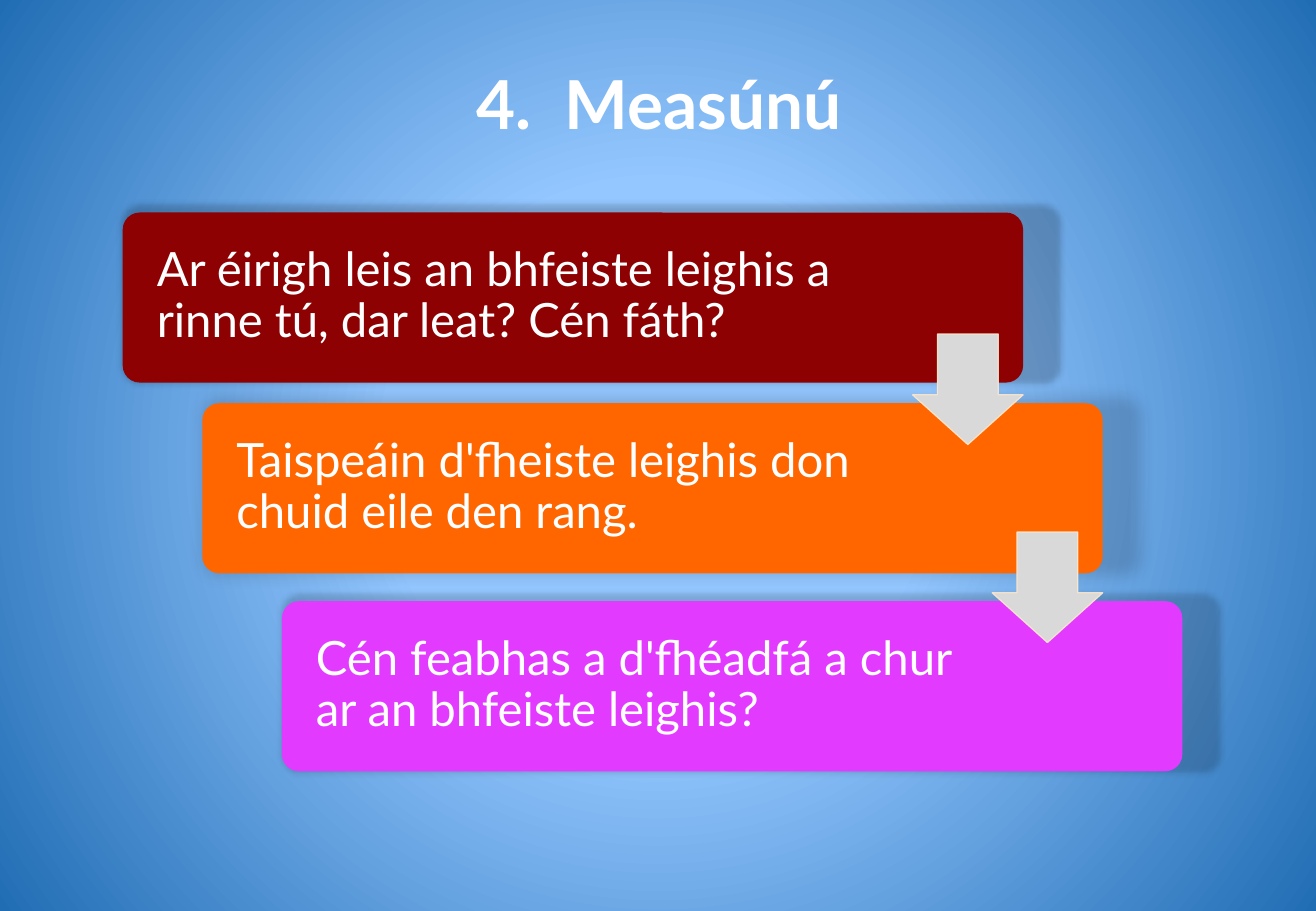
from lxml import etree
from pptx import Presentation
from pptx.dml.color import RGBColor
from pptx.enum.shapes import MSO_SHAPE
from pptx.enum.text import MSO_ANCHOR, PP_ALIGN
from pptx.oxml import parse_xml
from pptx.oxml.ns import nsdecls, qn
from pptx.util import Inches, Pt

CARD_SHAPE = MSO_SHAPE.ROUNDED_RECTANGLE
ARROW_SHAPE = MSO_SHAPE.DOWN_ARROW
MIDDLE = MSO_ANCHOR.MIDDLE
CENTER = PP_ALIGN.CENTER

FONT = "Lato"
TITLE_ONLY = 5
COLORS = {
    "glow": "94C7FF",
    "edge": "216DB4",
    "red": "8E0103",
    "orange": "FF6600",
    "pink": "E23BFF",
    "arrow": "D9D9D9",
    "arrow_line": "FDE8CD",
    "text": "FFFFFF",
    "shadow": "000000",
}

# Staircase: first left edge, step to the right, card and arrow sizes (inches)
FIRST_LEFT, STEP = 1.01, 0.655
CARD_WIDTH, CARD_HEIGHT = 7.41, 1.4
ARROW_SIZE, ARROW_RISE = 0.91, 0.57

# Top, colour, shadow opacity (%), shadow blur (pt), text width, wording
CARDS = [
    (1.75, "red", 20, 4, 5.91,
     "Ar éirigh leis an bhfeiste leighis a rinne tú, dar leat? Cén fáth?"),
    (3.32, "orange", 15, 8.8, 5.77,
     "Taispeáin d'fheiste leighis don chuid eile den rang."),
    (4.95, "pink", 16, 4, 5.77,
     "Cén feabhas a d'fhéadfá a chur ar an bhfeiste leighis?"),
]


def rgb(name):
    return RGBColor.from_string(COLORS[name])


def format_text(box, size, bold=False):
    for para in box.text_frame.paragraphs:
        for span in para.runs:
            span.font.name = FONT
            span.font.size = Pt(size)
            span.font.bold = bold
            span.font.color.rgb = rgb("text")


def paint_background(page):
    """Radial gradient, light in the centre."""
    page.background.fill.solid()
    properties = page.background._cSld.bg.bgPr
    gradient = parse_xml(
        f'<a:gradFill {nsdecls("a")} rotWithShape="1"><a:gsLst>'
        f'<a:gs pos="34000"><a:srgbClr val="{COLORS["glow"]}"/></a:gs>'
        f'<a:gs pos="100000"><a:srgbClr val="{COLORS["edge"]}"/></a:gs>'
        '</a:gsLst><a:path path="circle">'
        '<a:fillToRect l="50000" t="50000" r="50000" b="50000"/>'
        '</a:path></a:gradFill>')
    properties.replace(properties.find(qn("a:solidFill")), gradient)


def add_title(page, left, top, width, height):
    title = page.shapes.title
    title.left, title.top = Inches(left), Inches(top)
    title.width, title.height = Inches(width), Inches(height)
    title.text_frame.text = "4.  Measúnú"
    title.text_frame.vertical_anchor = MIDDLE
    title.text_frame.paragraphs[0].alignment = CENTER
    format_text(title, 40, bold=True)


def add_shadow(shape, opacity, blur):
    """Slightly enlarged shadow, shifted 4 pt upwards."""
    shape.shadow.inherit = False
    effects = shape._element.spPr.find(qn("a:effectLst"))
    effects.append(parse_xml(
        f'<a:outerShdw {nsdecls("a")} blurRad="{Pt(blur)}" dist="{Pt(4)}" '
        'dir="16200000" sx="104000" sy="104000" algn="tl" rotWithShape="0">'
        f'<a:srgbClr val="{COLORS["shadow"]}">'
        f'<a:alpha val="{opacity * 1000}"/></a:srgbClr></a:outerShdw>'))


def add_card(page, left, top, color, opacity, blur, text_width, text):
    card = page.shapes.add_shape(
        CARD_SHAPE, Inches(left), Inches(top),
        Inches(CARD_WIDTH), Inches(CARD_HEIGHT))
    card.adjustments[0] = 0.1
    card.fill.solid()
    card.fill.fore_color.rgb = rgb(color)
    card.line.fill.background()
    add_shadow(card, opacity, blur)

    # Wording, kept clear of the arrows on the right
    box = page.shapes.add_textbox(
        Inches(left + 0.04), Inches(top + 0.04),
        Inches(text_width), Inches(CARD_HEIGHT - 0.09))
    frame = box.text_frame
    frame.word_wrap = True
    frame.vertical_anchor = MIDDLE
    frame.margin_left = Inches(0.24)
    frame.margin_top = frame.margin_right = frame.margin_bottom = Inches(0.12)
    frame.text = text
    frame.paragraphs[0].line_spacing = 0.9
    format_text(box, 28)


def add_arrow(page, right, top):
    arrow = page.shapes.add_shape(
        ARROW_SHAPE, Inches(right - ARROW_SIZE), Inches(top),
        Inches(ARROW_SIZE), Inches(ARROW_SIZE))
    arrow.adjustments[0] = 0.55
    arrow.adjustments[1] = 0.45
    arrow.shadow.inherit = False
    arrow.fill.solid()
    arrow.fill.fore_color.rgb = rgb("arrow")
    arrow.line.color.rgb = rgb("arrow_line")
    arrow.line.width = Pt(0.75)
    line_color = arrow._element.spPr.find(qn("a:ln")).find(".//" + qn("a:srgbClr"))
    etree.SubElement(line_color, qn("a:alpha")).set("val", "90000")


def add_staircase(page, left):
    lefts = [left + STEP * index for index in range(len(CARDS))]
    for card_left, card in zip(lefts, CARDS):
        add_card(page, card_left, *card)
    # Each arrow ends on the next card, flush with the right edge of its own
    for card_left, next_card in zip(lefts, CARDS[1:]):
        add_arrow(page, card_left + CARD_WIDTH, next_card[0] - ARROW_RISE)


def main():
    deck = Presentation()
    deck.slide_width, deck.slide_height = Inches(10.83), Inches(7.5)
    page = deck.slides.add_slide(deck.slide_layouts[TITLE_ONLY])
    paint_background(page)
    add_title(page, 0.16, 0.46, 10.53, 0.77)
    add_staircase(page, FIRST_LEFT)
    deck.save("out.pptx")


if __name__ == "__main__":
    main()
